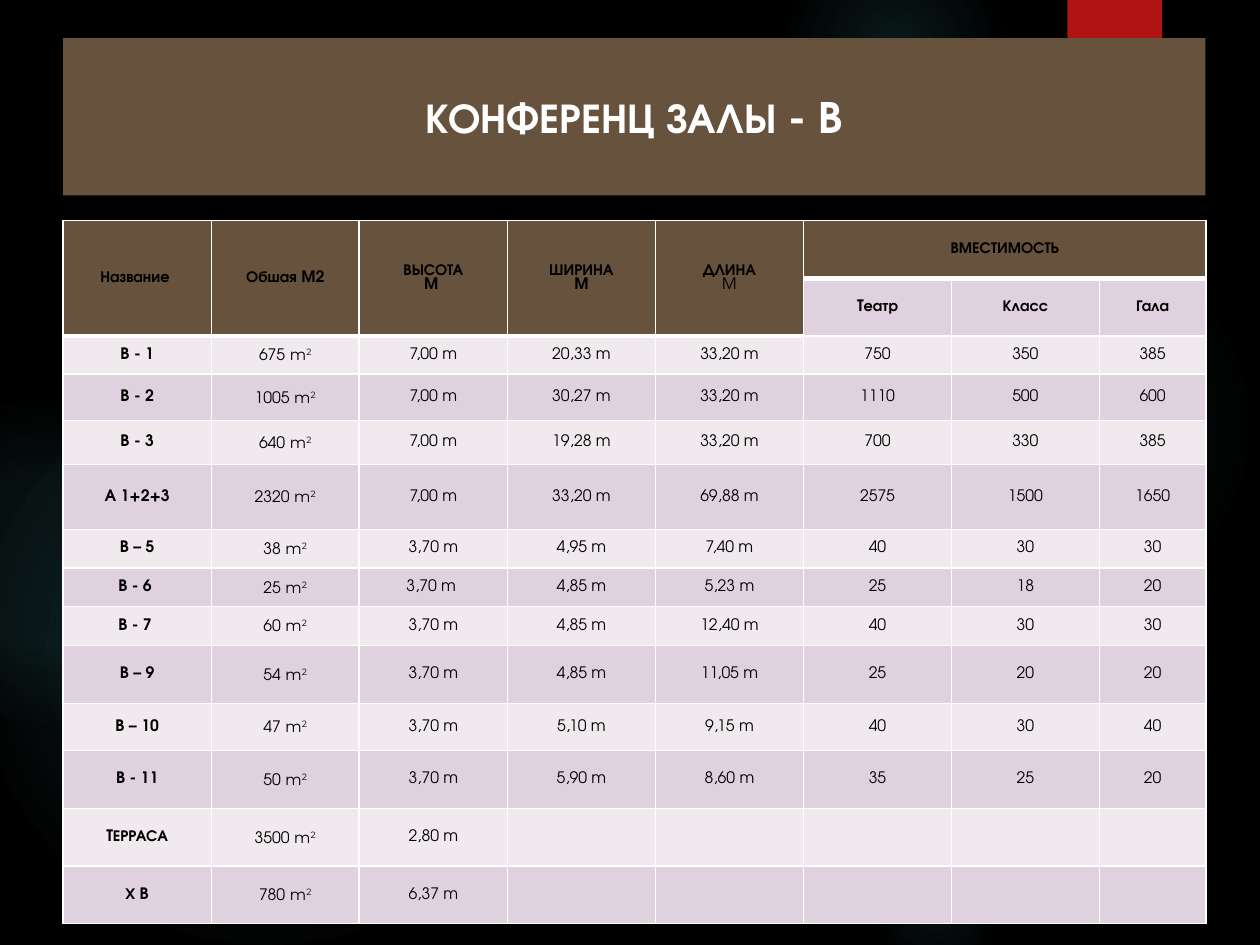
import pptx
import pptx.dml.color
import pptx.enum.shapes
import pptx.enum.text
import pptx.oxml
import pptx.oxml.ns
import pptx.util
from pptx.util import Cm

# Content
TITLE = "КОНФЕРЕНЦ ЗАЛЫ - B"
HEADERS = ["Название ", "Обшая M2", "ВЫСОТА\nM ", "ШИРИНА\vM", "ДЛИНА\nM"]
CAPACITY = "ВМЕСТИМОСТЬ"
LAYOUTS = ["Tеатр", "Класс", "Гала"]
# name, area in square metres, height, width, length, seats for each layout
HALLS = [
    ("B - 1", "675", "7,00 m", "20,33 m", "33,20 m", "750", "350", "385"),
    ("B - 2", "1005", "7,00 m", "30,27 m", "33,20 m", "1110", "500", "600"),
    ("B - 3", "640", "7,00 m", "19,28 m", "33,20 m", "700", "330", "385"),
    ("A 1+2+3", "2320", "7,00 m", "33,20 m", "69,88 m", "2575", "1500", "1650"),
    ("B – 5", "38", "3,70 m", "4,95 m", "7,40 m", "40", "30", "30"),
    ("B - 6 ", "25", "3,70 m ", "4,85 m", "5,23 m", "25", "18", "20"),
    ("B - 7 ", "60", "3,70 m", "4,85 m", "12,40 m", "40", "30", "30"),
    ("B – 9", "54", "3,70 m", "4,85 m", "11,05 m", "25", "20", "20"),
    ("B – 10", "47", "3,70 m", "5,10 m", "9,15 m", "40", "30", "40"),
    ("B - 11", "50", "3,70 m", "5,90 m", "8,60 m", "35", "25", "20"),
    ("TЕРРАСА", "3500", "2,80 m"),
    ("Х B", "780", "6,37 m"),
]
COLUMN_WIDTHS = [2.99, 2.98] * 3 + [2.98, 2.15]
ROW_HEIGHTS = [1.16, 1.16, 0.77, 0.94, 0.88, 1.31, 0.78, 0.78, 0.78,
               1.17, 0.95, 1.17, 1.16, 1.16]

# Background glows: left, top, diameter, (position %, opacity %) stops
GLOWS = [
    (17.5, 4.65, 7.82, [(0, 7), (36, 6), (69, 0)]),
    (15.8, -1.27, 4.45, [(0, 14), (36, 7), (73, 0)]),
    (17.5, 16.94, 2.74, [(0, 9), (36, 5), (66, 0)]),
    (-0.43, 7.42, 11.63, [(0, 11), (36, 10), (75, 0)]),
    (-2.34, 8.05, 6.55, [(0, 8), (36, 8), (72, 0)]),
]

FONT, UNIT_FONT = "TeX Gyre Adventor", "Montserrat"
BLACK, WHITE, BROWN, RED, TEAL = "000000", "FFFFFF", "66523D", "B01513", "50B9C1"
LIGHT, DARK = "F0EAEF", "DFD2DE"
NAMESPACE = pptx.oxml.ns.nsdecls("a")


def paint(fill, color):
    fill.solid()
    fill.fore_color.rgb = pptx.dml.color.RGBColor.from_string(color)


def format_run(run, size, color, bold, font=FONT):
    run.font.name = font
    run.font.size = pptx.util.Pt(size)
    run.font.bold = bold
    paint(run.font.fill, color)


def add_plain_shape(slide, kind, left, top, width, height):
    shape = slide.shapes.add_shape(kind, Cm(left), Cm(top), Cm(width), Cm(height))
    shape.shadow.inherit = False
    shape.line.fill.background()
    return shape


def add_glow(slide, left, top, diameter, stops):
    oval = pptx.enum.shapes.MSO_SHAPE.OVAL
    shape = add_plain_shape(slide, oval, left, top, diameter, diameter)
    stop_xml = "".join(
        f'<a:gs pos="{position * 1000}"><a:srgbClr val="{TEAL}">'
        f'<a:alpha val="{opacity * 1000}"/></a:srgbClr></a:gs>'
        for position, opacity in stops)
    gradient = pptx.oxml.parse_xml(
        f'<a:gradFill {NAMESPACE} rotWithShape="1"><a:gsLst>{stop_xml}</a:gsLst>'
        '<a:path path="circle"><a:fillToRect l="50000" t="50000" r="50000" b="50000"/>'
        '</a:path></a:gradFill>')
    shape.fill.background()
    properties = shape.fill._xPr
    properties.replace(properties.find(pptx.oxml.ns.qn("a:noFill")), gradient)


def style_cell(cell, fill, bottom_width=1):
    cell.margin_left = cell.margin_right = Cm(0.08)
    cell.margin_top = cell.margin_bottom = 0
    cell.vertical_anchor = pptx.enum.text.MSO_ANCHOR.MIDDLE
    paint(cell.fill, fill)
    properties = cell._tc.get_or_add_tcPr()
    for index, side in enumerate("LRTB"):
        width = pptx.util.Pt(bottom_width if side == "B" else 1)
        properties.insert(index, pptx.oxml.parse_xml(
            f'<a:ln{side} {NAMESPACE} w="{width}"><a:solidFill>'
            f'<a:srgbClr val="{WHITE}"/></a:solidFill></a:ln{side}>'))


def write_cell(cell, text, bold):
    cell.text_frame.text = text
    for paragraph in cell.text_frame.paragraphs:
        paragraph.alignment = pptx.enum.text.PP_ALIGN.CENTER
        for run in paragraph.runs:
            format_run(run, 9, BLACK, bold)


def add_square_metres(cell):
    paragraph = cell.text_frame.paragraphs[0]
    for text in ("m", "2"):
        run = paragraph.add_run()
        run.text = text
        format_run(run, 9, BLACK, False, UNIT_FONT)
    run.font._element.set("baseline", "30000")


def fill_header(table):
    for column in range(8):
        style_cell(table.cell(0, column), BROWN, 3)
        if column < 5:
            style_cell(table.cell(1, column), BROWN, 3)
        else:
            style_cell(table.cell(1, column), DARK)
    for column, text in enumerate(HEADERS):
        cell = table.cell(0, column)
        cell.merge(table.cell(1, column))
        write_cell(cell, text, True)
    table.cell(0, 4).text_frame.paragraphs[1].runs[0].font.bold = False
    table.cell(0, 5).merge(table.cell(0, 7))
    write_cell(table.cell(0, 5), CAPACITY, True)
    for column, text in enumerate(LAYOUTS, start=5):
        write_cell(table.cell(1, column), text, True)


def fill_halls(table):
    for row, hall in enumerate(HALLS, start=2):
        for column in range(8):
            cell = table.cell(row, column)
            style_cell(cell, DARK if row % 2 else LIGHT)
            if column < len(hall):
                text = hall[column] + (" " if column == 1 else "")
                write_cell(cell, text, column == 0)
        add_square_metres(table.cell(row, 1))


def main():
    presentation = pptx.Presentation()
    presentation.slide_width, presentation.slide_height = Cm(25.4), Cm(19.05)
    slide = presentation.slides.add_slide(presentation.slide_layouts[5])
    paint(slide.background.fill, BLACK)

    # Backdrop
    for glow in GLOWS:
        add_glow(slide, *glow)
    rectangle = pptx.enum.shapes.MSO_SHAPE.RECTANGLE
    tab = add_plain_shape(slide, rectangle, 21.52, 0, 1.91, 3.05)
    paint(tab.fill, RED)

    # Title, in front of the backdrop
    title = slide.shapes.title
    tab._element.addnext(title._element)
    title.left, title.top, title.width, title.height = Cm(1.27), Cm(0.77), Cm(23.03), Cm(3.17)
    paint(title.fill, BROWN)
    title.text_frame.text = TITLE
    title.text_frame.vertical_anchor = pptx.enum.text.MSO_ANCHOR.MIDDLE
    paragraph = title.text_frame.paragraphs[0]
    paragraph.alignment = pptx.enum.text.PP_ALIGN.CENTER
    format_run(paragraph.runs[0], 24, WHITE, True)

    # Table of halls
    table = slide.shapes.add_table(
        len(ROW_HEIGHTS), len(COLUMN_WIDTHS), Cm(1.27), Cm(4.45),
        Cm(sum(COLUMN_WIDTHS)), Cm(sum(ROW_HEIGHTS))).table
    for column, width in zip(table.columns, COLUMN_WIDTHS):
        column.width = Cm(width)
    for row, height in zip(table.rows, ROW_HEIGHTS):
        row.height = Cm(height)
    fill_header(table)
    fill_halls(table)

    presentation.save("out.pptx")


if __name__ == "__main__":
    main()
